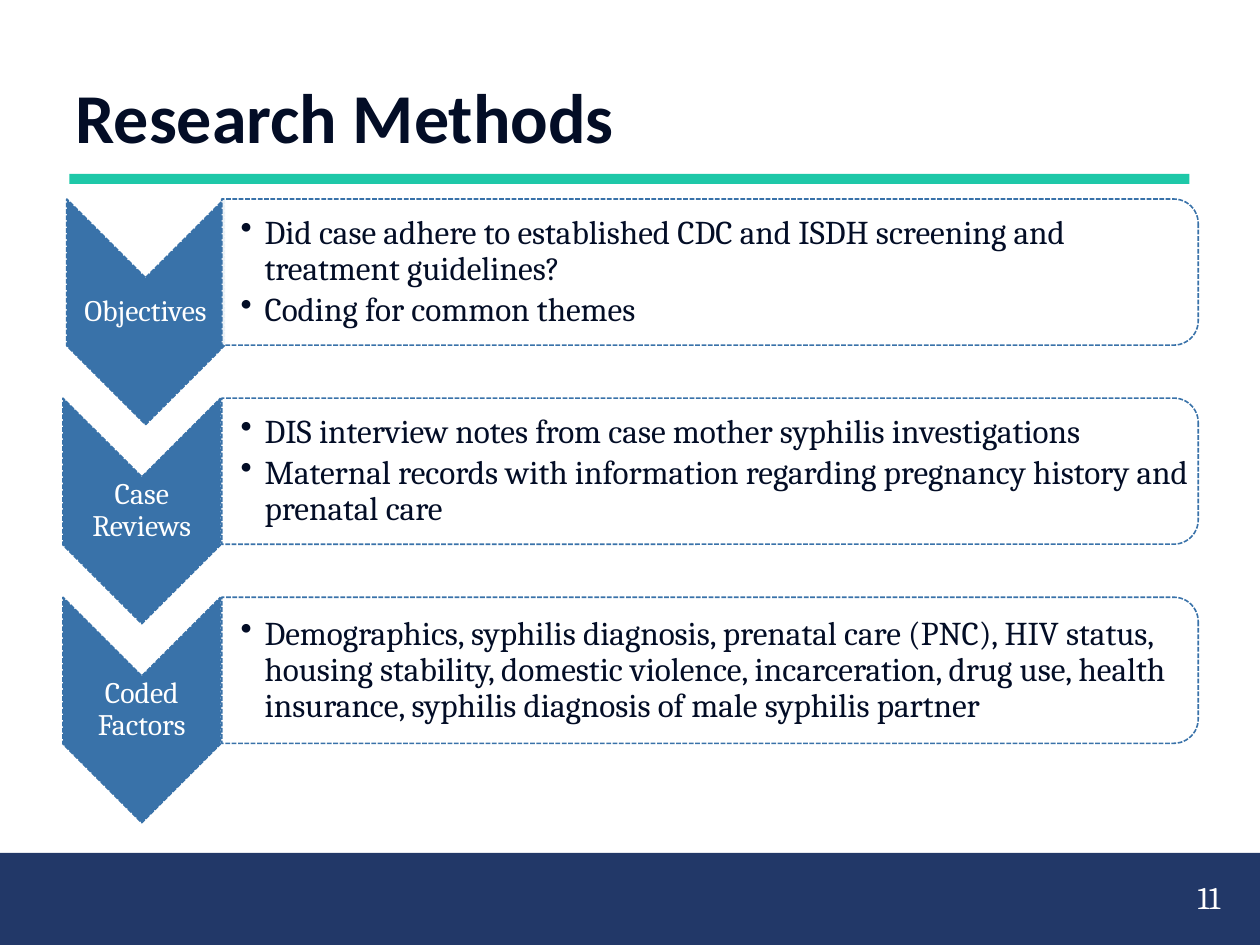
from lxml import etree
from pptx import Presentation
from pptx.dml.color import RGBColor
from pptx.enum.dml import MSO_LINE
from pptx.enum.shapes import MSO_SHAPE
from pptx.enum.text import MSO_ANCHOR, PP_ALIGN
from pptx.oxml.ns import qn
from pptx.util import Inches, Pt

RECTANGLE, CHEVRON = MSO_SHAPE.RECTANGLE, MSO_SHAPE.CHEVRON
PANEL = MSO_SHAPE.ROUND_2_SAME_RECTANGLE
MIDDLE, TOP = MSO_ANCHOR.MIDDLE, MSO_ANCHOR.TOP
LEFT, CENTER = PP_ALIGN.LEFT, PP_ALIGN.CENTER
DASH = MSO_LINE.SQUARE_DOT

COLORS = {"ink": "030D26", "white": "FFFFFF", "blue": "3972A9",
          "teal": "1EC8A8", "navy": "223868"}
TITLE = "Research Methods"
PAGE_NUMBER = "11"
# Label, left edge of its chevron, bullet points
STEPS = [
    ("Objectives", 0.53, [
        "Did case adhere to established CDC and ISDH screening and treatment guidelines?",
        "Coding for common themes"]),
    ("Case Reviews", 0.5, [
        "DIS interview notes from case mother syphilis investigations",
        "Maternal records with information regarding pregnancy history and prenatal care"]),
    ("Coded Factors", 0.5, [
        "Demographics, syphilis diagnosis, prenatal care (PNC), HIV status, "
        "housing stability, domestic violence, incarceration, drug use, health "
        "insurance, syphilis diagnosis of male syphilis partner"]),
]

FIRST_TOP, PITCH = 1.58, 1.58
CHEVRON_W, CHEVRON_H = 1.25, 1.79
PANEL_LEFT, PANEL_W, PANEL_H = 1.76, 7.75, 1.16
LABEL_H, BODY_W, BODY_H = 0.54, 7.69, 1.05
INDENT = 0.19


def color(name):
    return RGBColor.from_string(COLORS[name])


def add_block(page, kind, left, top, width, height, fill):
    block = page.shapes.add_shape(
        kind, Inches(left), Inches(top), Inches(width), Inches(height))
    block.shadow.inherit = False
    block.fill.solid()
    block.fill.fore_color.rgb = color(fill)
    block.line.fill.background()
    return block


def add_turned_block(page, kind, left, top, width, height, fill):
    """Add a dashed shape turned by 90 degrees; the sizes are those seen after turning."""
    shift = (width - height) / 2
    block = add_block(page, kind, left + shift, top - shift, height, width, fill)
    block.rotation = 90
    block.line.color.rgb = color("blue")
    block.line.width = Pt(0.9)
    block.line.dash_style = DASH
    return block


def style(span, size, fill, face="Cambria", bold=False):
    span.font.size = Pt(size)
    span.font.name = face
    span.font.bold = bold
    span.font.color.rgb = color(fill)


def add_text(page, lines, left, top, width, height, size, fill, align=CENTER,
             anchor=MIDDLE, insets=(0.01, 0.01), spacing=0.9, bullets=False):
    box = page.shapes.add_textbox(
        Inches(left), Inches(top), Inches(width), Inches(height))
    frame = box.text_frame
    frame.word_wrap = True
    frame.vertical_anchor = anchor
    frame.margin_left, frame.margin_right = map(Inches, insets)
    frame.margin_top = frame.margin_bottom = Inches(min(insets[1], 0.05))
    for index, line in enumerate(lines):
        para = frame.add_paragraph() if index else frame.paragraphs[0]
        if bullets:
            props = para._p.get_or_add_pPr()
            props.set("marL", str(Inches(INDENT)))
            props.set("indent", str(-Inches(INDENT)))
            etree.SubElement(props, qn("a:buChar"), char="•")
        para.alignment = align
        para.line_spacing = spacing
        if index:
            para.space_before = Pt(3)
        span = para.add_run()
        span.text = line
        style(span, size, fill)


def add_step(page, top, label, chevron_left, points):
    add_turned_block(page, CHEVRON, chevron_left, top, CHEVRON_W, CHEVRON_H, "blue")
    add_text(page, [label], chevron_left, top + (CHEVRON_H - LABEL_H) / 2,
             CHEVRON_W, LABEL_H, 17, "white")
    panel = add_turned_block(page, PANEL, PANEL_LEFT, top, PANEL_W, PANEL_H, "white")
    shade = panel.fill._xPr.find(qn("a:solidFill"))[0]
    etree.SubElement(shade, qn("a:alpha"), val="90000")
    add_text(page, points, PANEL_LEFT, top + (PANEL_H - BODY_H) / 2, BODY_W, BODY_H,
             19, "ink", align=LEFT, insets=(0.15, 0.01), bullets=True)


def main():
    deck = Presentation()
    deck.slide_width, deck.slide_height = Inches(10), Inches(7.5)
    page = deck.slides.add_slide(deck.slide_layouts.get_by_name("Title Only"))

    add_block(page, RECTANGLE, 0.55, 1.38, 8.89, 0.08, "teal")
    add_block(page, RECTANGLE, 0, 6.77, 10, 0.73, "navy")

    title = page.shapes.title
    title.left, title.top = Inches(0.5), Inches(0.29)
    title.width, title.height = Inches(9), Inches(1.25)
    title.text_frame.vertical_anchor = MIDDLE
    para = title.text_frame.paragraphs[0]
    para.alignment = LEFT
    span = para.add_run()
    span.text = TITLE
    style(span, 40, "ink", "Calibri", True)

    for row, step in enumerate(STEPS):
        add_step(page, FIRST_TOP + row * PITCH, *step)

    add_text(page, [PAGE_NUMBER], 9.27, 6.92, 0.65, 0.42, 18, "white",
             anchor=TOP, insets=(0.1, 0.1), spacing=1)
    deck.save("out.pptx")


if __name__ == "__main__":
    main()
